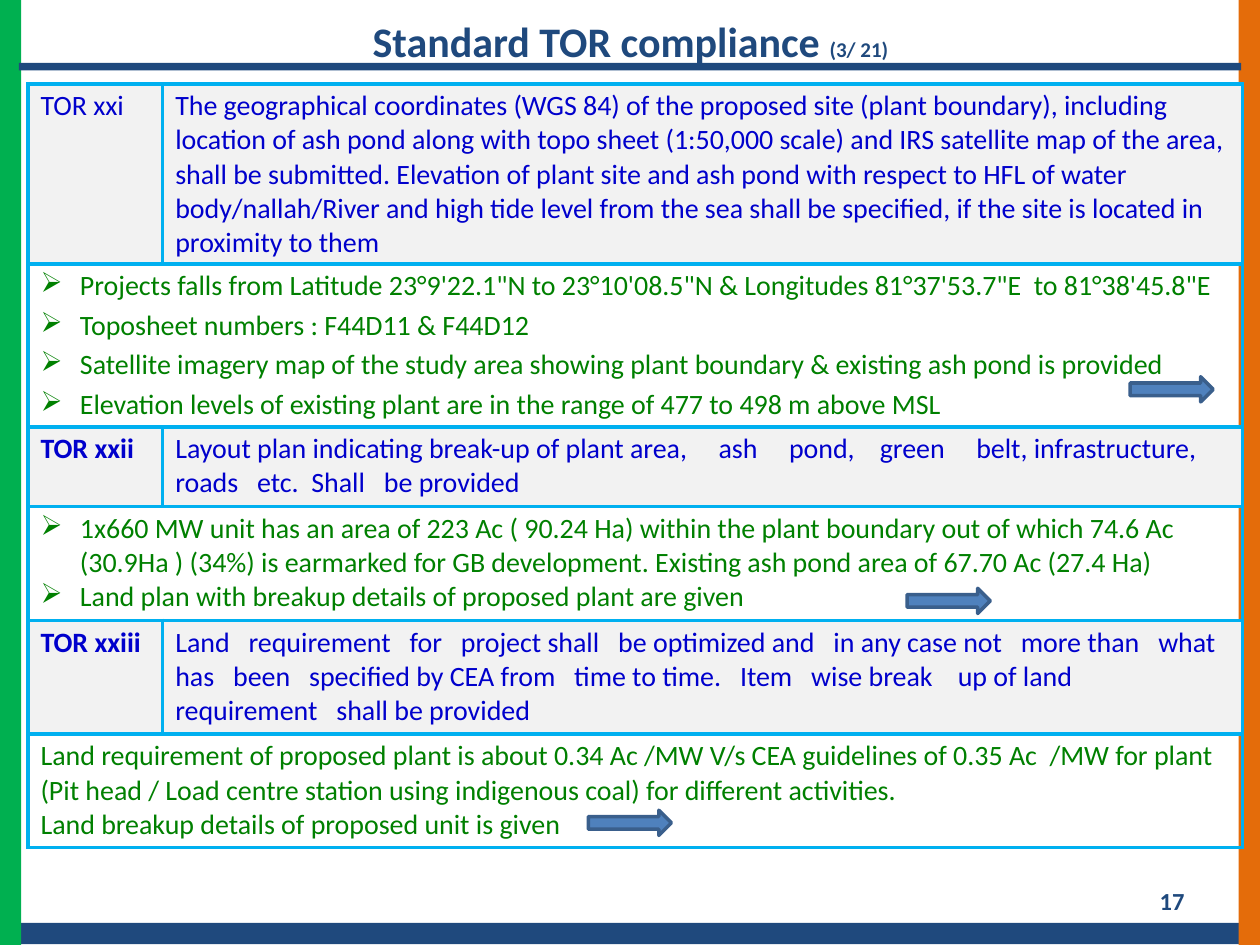
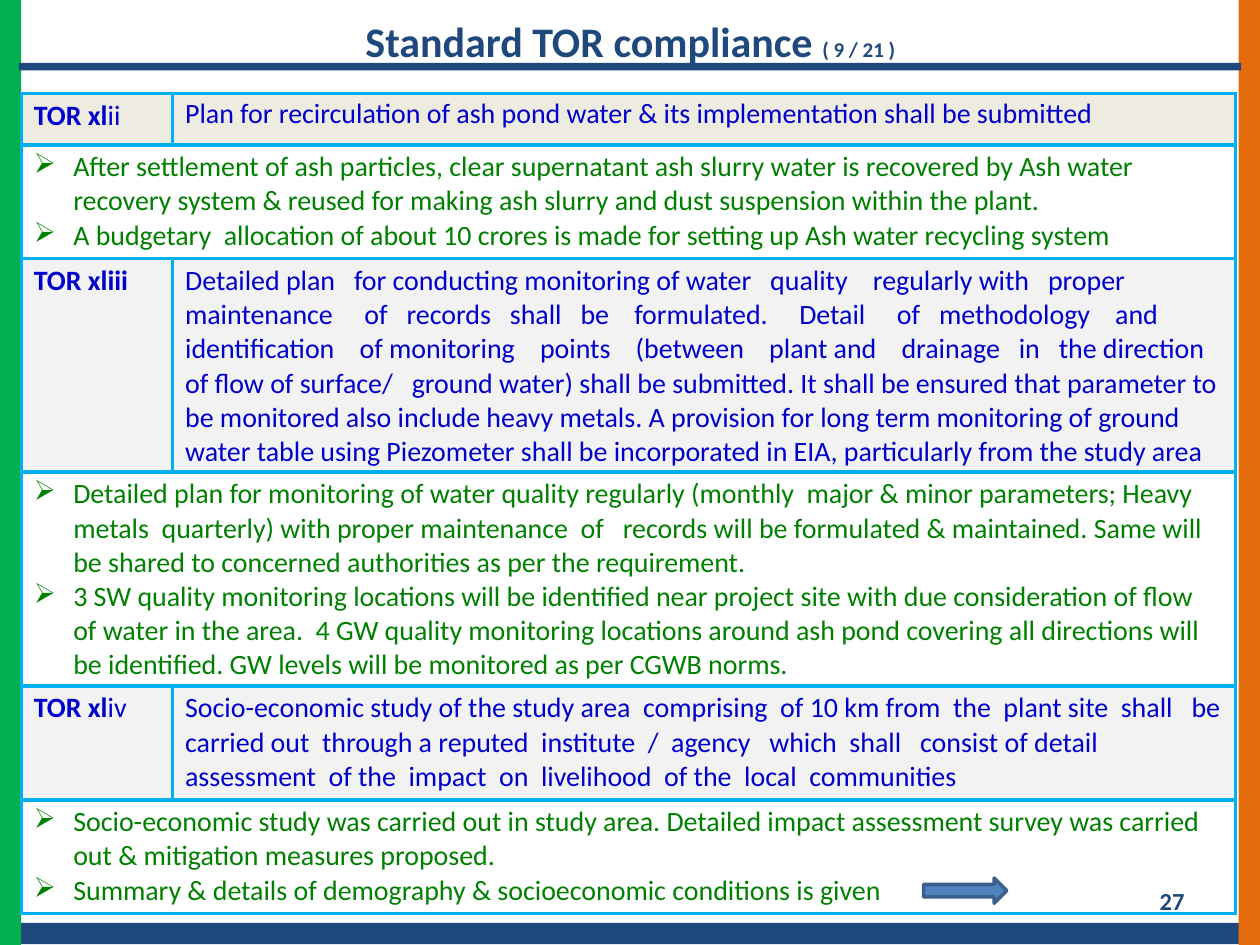
from dataclasses import dataclass
from typing import NamedTuple

from lxml import etree
from pptx import Presentation
from pptx.dml.color import RGBColor
from pptx.enum.shapes import MSO_SHAPE as SHAPE
from pptx.enum.text import MSO_ANCHOR as ANCHOR, PP_ALIGN as ALIGN
from pptx.oxml.ns import qn
from pptx.util import Pt

FONT = "Calibri"
COLORS = {
    "navy": "1F497D", "green": "00B050", "orange": "E46C0A",
    "question": "0000CC", "answer": "008000", "border": "00B0F0",
    "grey": "F2F2F2", "cream": "EEECE1",
    "arrow": "4F81BD", "arrow_line": "3A5F8C",
}
BODY_SIZE = 16
BULLET_INDENT = 22.5
ARROW_SIZE = (47.5, 14.4)
TABLE_WIDTH = 694


class Band(NamedTuple):
    left: float
    top: float
    width: float
    height: float
    color: str


class Piece(NamedTuple):
    """A stretch of text in one weight."""
    text: str
    bold: bool = False
    size: float = BODY_SIZE


@dataclass
class Item:
    """One TOR requirement row and the compliance row beneath it."""
    label: list[Piece]
    requirement: str
    answers: list[str]
    heights: tuple[float, float]
    bulleted: bool = True
    space_before: float = 0
    fill: str = "grey"
    align: ALIGN | None = None
    line_spacing: float | None = None


@dataclass
class TorSlide:
    progress: str
    number: str
    table_at: tuple[float, float]
    label_width: float
    items: list[Item]
    arrows: list[tuple[float, float]]


BANDS = [
    Band(12, 527.4, 698.4, 12.2, "navy"),
    Band(0, 0, 12.2, 540, "green"),
    Band(707.8, 0, 12.2, 540, "orange"),
]
TITLE_RULE = Band(10.8, 36, 698.4, 4.3, "navy")

SLIDES = [
    TorSlide(
        progress="(3/ 21)", number="17", table_at=(16, 48), label_width=77,
        items=[
            Item(
                [Piece("TOR xxi")],
                "The geographical coordinates (WGS 84) of the proposed site (plant boundary), "
                "including location of ash pond along with topo sheet (1:50,000 scale) and IRS "
                "satellite map of the area, shall be submitted. Elevation of plant site and ash "
                "pond with respect to HFL of water body/nallah/River and high tide level from the "
                "sea shall be specified, if the site is located in proximity to them",
                ["Projects falls from Latitude 23°9'22.1\"N to 23°10'08.5\"N & Longitudes "
                 "81°37'53.7\"E  to 81°38'45.8\"E",
                 "Toposheet numbers : F44D11 & F44D12",
                 "Satellite imagery map of the study area showing plant boundary & existing ash "
                 "pond is provided",
                 "Elevation levels of existing plant are in the range of 477 to 498 m above MSL"],
                (103, 93), space_before=3,
            ),
            Item(
                [Piece("TOR xxii", True)],
                "Layout plan indicating break-up of plant area,     ash     pond,    green     "
                "belt, infrastructure, roads   etc.  Shall   be provided",
                ["1x660 MW unit has an area of 223 Ac ( 90.24 Ha) within the plant boundary out "
                 "of which 74.6 Ac (30.9Ha ) (34%) is earmarked for GB development. Existing ash "
                 "pond area of 67.70 Ac (27.4 Ha)",
                 "Land plan with breakup details of proposed plant are given"],
                (45.5, 65),
            ),
            Item(
                [Piece("TOR xxiii", True)],
                "Land   requirement   for   project shall   be optimized and   in any case not   "
                "more than   what has   been   specified by CEA from   time to time.   Item   "
                "wise break    up of land   requirement   shall be provided",
                ["Land requirement of proposed plant is about 0.34 Ac /MW V/s CEA guidelines of "
                 "0.35 Ac  /MW for plant (Pit head / Load centre station using indigenous coal) "
                 "for different activities.",
                 "Land breakup details of proposed unit is given"],
                (65, 65), bulleted=False,
            ),
        ],
        arrows=[(645.8, 215.3), (518.4, 336.2), (336.2, 463)],
    ),
    TorSlide(
        progress="( 9 / 21 )", number="27", table_at=(12.2, 53.5), label_width=86.4,
        items=[
            Item(
                [Piece("TOR xl", True), Piece("ii")],
                "Plan for recirculation of ash pond water & its implementation shall be submitted",
                ["After settlement of ash particles, clear supernatant ash slurry water is "
                 "recovered by Ash water recovery system & reused for making ash slurry and dust "
                 "suspension within the plant.",
                 "A budgetary  allocation of about 10 crores is made for setting up Ash water "
                 "recycling system"],
                (29.3, 65), fill="cream", align=ALIGN.JUSTIFY, line_spacing=0.9,
            ),
            Item(
                [Piece("TOR xliii", True)],
                "Detailed plan   for conducting monitoring of water   quality    regularly with   "
                "proper maintenance     of   records   shall   be    formulated.     Detail     "
                "of   methodology    and identification    of monitoring    points    (between    "
                "plant and    drainage   in   the direction of flow of surface/   ground water) "
                "shall be submitted. It shall be ensured that parameter to be monitored also "
                "include heavy metals. A provision for long term monitoring of ground water table "
                "using Piezometer shall be incorporated in EIA, particularly from the study area",
                ["Detailed plan for monitoring of water quality regularly (monthly  major & minor "
                 "parameters; Heavy metals  quarterly) with proper maintenance  of   records will "
                 "be formulated & maintained. Same will be shared to concerned authorities as per "
                 "the requirement.",
                 "3 SW quality monitoring locations will be identified near project site with due "
                 "consideration of flow of water in the area.  4 GW quality monitoring locations "
                 "around ash pond covering all directions will be identified. GW levels will be "
                 "monitored as per CGWB norms."],
                (122, 122.3),
            ),
            Item(
                [Piece("TOR xl", True), Piece("iv")],
                "Socio-economic study of the study area  comprising  of 10 km from  the  plant "
                "site  shall   be carried out  through a reputed  institute  /  agency   which  "
                "shall   consist of detail   assessment  of the  impact  on  livelihood  of the  "
                "local  communities",
                ["Socio-economic study was carried out in study area. Detailed impact assessment "
                 "survey was carried out & mitigation measures proposed.",
                 "Summary & details of demography & socioeconomic conditions is given"],
                (65, 65),
            ),
        ],
        arrows=[(527.8, 501.8)],
    ),
]


def rgb(name: str) -> RGBColor:
    return RGBColor.from_string(COLORS[name])


def write(p, pieces: list[Piece], color: str) -> None:
    for piece in pieces:
        r = p.add_run()
        r.text = piece.text
        r.font.name = FONT
        r.font.size = Pt(piece.size)
        r.font.bold = piece.bold
        r.font.color.rgb = rgb(color)


def add_block(slide, kind: SHAPE, band: Band):
    sp = slide.shapes.add_shape(kind, *map(Pt, band[:4]))
    sp.shadow.inherit = False
    sp.fill.solid()
    sp.fill.fore_color.rgb = rgb(band.color)
    sp.line.fill.background()
    return sp


def add_arrow(slide, left: float, top: float) -> None:
    sp = add_block(slide, SHAPE.RIGHT_ARROW, Band(left, top, *ARROW_SIZE, "arrow"))
    sp.line.color.rgb = rgb("arrow_line")
    sp.line.width = Pt(2)


def add_text(slide, box: tuple[float, ...], pieces: list[Piece], align: ALIGN):
    tf = slide.shapes.add_textbox(*map(Pt, box)).text_frame
    tf.word_wrap = True
    p = tf.paragraphs[0]
    p.alignment = align
    write(p, pieces, "navy")
    return tf


def add_bullet(p) -> None:
    props = p._p.get_or_add_pPr()
    props.set("marL", str(Pt(BULLET_INDENT)))
    props.set("indent", str(-Pt(BULLET_INDENT)))
    etree.SubElement(props, qn("a:buChar")).set("char", "➢")


def style_cell(cell, fill: str | None) -> None:
    """Set the fill, the vertical margins and a border on all four sides."""
    if fill:
        cell.fill.solid()
        cell.fill.fore_color.rgb = rgb(fill)
    else:
        cell.fill.background()
    cell.margin_top = cell.margin_bottom = Pt(2.9)
    props = cell._tc.get_or_add_tcPr()
    for position, side in enumerate(("lnL", "lnR", "lnT", "lnB")):
        line = etree.Element(qn(f"a:{side}"), w=str(Pt(2.25)))
        solid = etree.SubElement(line, qn("a:solidFill"))
        etree.SubElement(solid, qn("a:srgbClr"), val=COLORS["border"])
        props.insert(position, line)


def fill_item(table, row: int, item: Item) -> None:
    label, requirement = table.cell(row, 0), table.cell(row, 1)
    answer, hidden = table.cell(row + 1, 0), table.cell(row + 1, 1)
    answer.merge(hidden)
    for offset, height in enumerate(item.heights):
        table.rows[row + offset].height = Pt(height)
    for cell, fill in ((label, item.fill), (requirement, item.fill),
                       (answer, None), (hidden, None)):
        style_cell(cell, fill)

    for cell, pieces in ((label, item.label), (requirement, [Piece(item.requirement)])):
        p = cell.text_frame.paragraphs[0]
        p.alignment = item.align
        write(p, pieces, "question")
    requirement.text_frame.paragraphs[0].line_spacing = item.line_spacing

    tf = answer.text_frame
    for i, text in enumerate(item.answers):
        p = tf.add_paragraph() if i else tf.paragraphs[0]
        if item.space_before:
            p.space_before = Pt(item.space_before)
        if item.bulleted:
            add_bullet(p)
        write(p, [Piece(text)], "answer")


def add_tor_table(slide, content: TorSlide) -> None:
    height = sum(sum(item.heights) for item in content.items)
    frame = slide.shapes.add_table(2 * len(content.items), 2, *map(Pt, content.table_at),
                                   Pt(TABLE_WIDTH), Pt(height))
    table = frame.table
    table.first_row = table.horz_banding = False
    table.columns[0].width = Pt(content.label_width)
    table.columns[1].width = Pt(TABLE_WIDTH - content.label_width)
    for i, item in enumerate(content.items):
        fill_item(table, 2 * i, item)


def build_slide(prs, content: TorSlide) -> None:
    slide = prs.slides.add_slide(prs.slide_layouts[6])
    for band in BANDS:
        add_block(slide, SHAPE.RECTANGLE, band)
    number = add_text(slide, (516.2, 500.4, 167.8, 28.8),
                      [Piece(content.number, True, 14)], ALIGN.RIGHT)
    number.vertical_anchor = ANCHOR.MIDDLE
    title = add_text(slide, (12.2, 1.4, 696.2, 38.9),
                     [Piece("Standard TOR compliance ", True, 24),
                      Piece(content.progress, True, 12)], ALIGN.CENTER)
    title.paragraphs[0].line_spacing = 1.14
    add_tor_table(slide, content)
    add_block(slide, SHAPE.RECTANGLE, TITLE_RULE)
    for left, top in content.arrows:
        add_arrow(slide, left, top)


def main() -> None:
    prs = Presentation()
    prs.slide_width, prs.slide_height = Pt(720), Pt(540)
    for content in SLIDES:
        build_slide(prs, content)
    prs.save("out.pptx")


if __name__ == "__main__":
    main()
